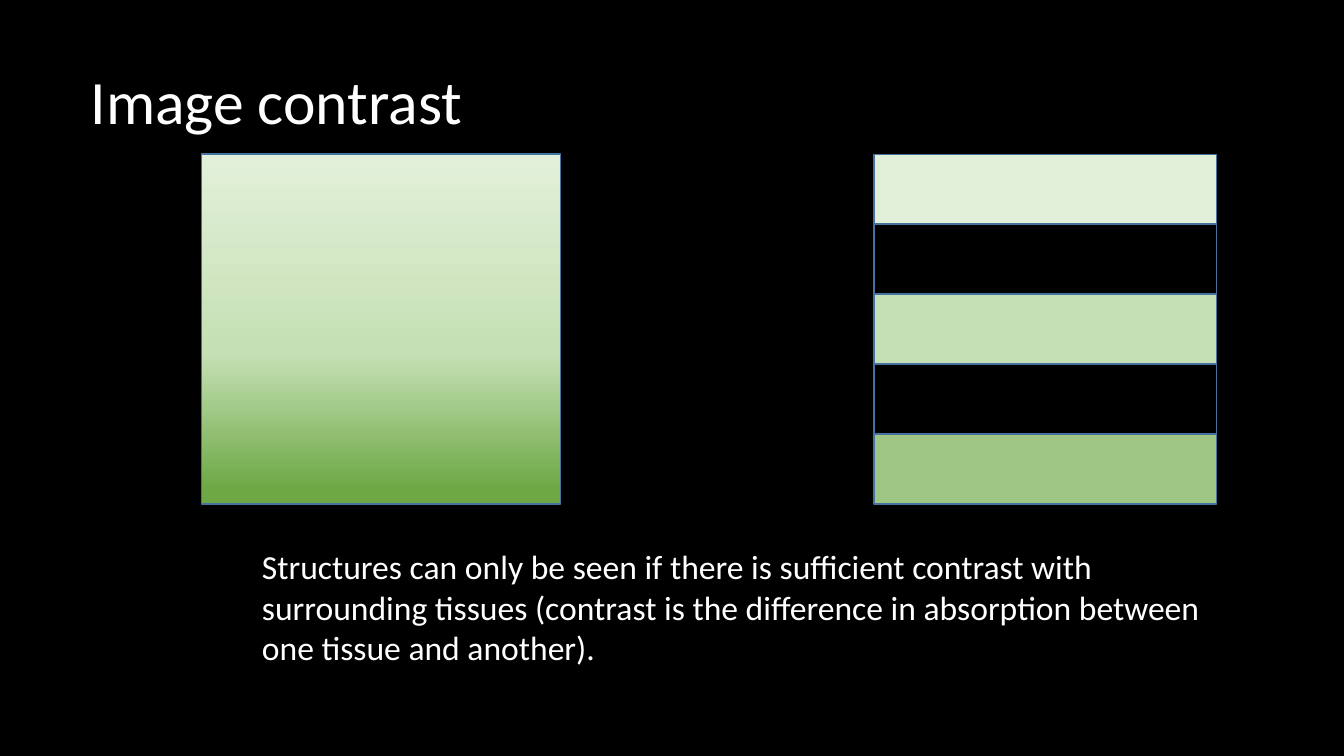
from lxml.etree import SubElement
from pptx import Presentation
from pptx.dml.color import RGBColor
from pptx.enum.shapes import MSO_SHAPE as Shape
from pptx.enum.text import MSO_ANCHOR as Anchor, MSO_AUTO_SIZE as AutoSize, PP_ALIGN as Align
from pptx.oxml.ns import qn
from pptx.util import Pt

BLACK = RGBColor(0x00, 0x00, 0x00)
WHITE = RGBColor(0xFF, 0xFF, 0xFF)
OUTLINE = RGBColor(0x43, 0x73, 0x9E)
PALE_GREEN = RGBColor(0xE2, 0xF0, 0xD9)
LIGHT_GREEN = RGBColor(0xC5, 0xE0, 0xB4)
MID_GREEN = RGBColor(0xA9, 0xD1, 0x8E)
DEEP_GREEN = RGBColor(0x6D, 0xA8, 0x45)

GRADIENT_STOPS = [(0, PALE_GREEN), (57, LIGHT_GREEN), (96, DEEP_GREEN)]
BANDS = [(4, MID_GREEN, 95), (2, LIGHT_GREEN, 100), (0, PALE_GREEN, 100),
         (3, None, 100), (1, BLACK, 100)]
BAND_COUNT = len(BANDS)

TITLE = "Image contrast"
EXPLANATION = ("Structures can only be seen if there is sufficient contrast with "
               "surrounding tissues (contrast is the difference in absorption between "
               "one tissue and another).")


def apply_format(target, values):
    for name, value in values.items():
        setattr(target, name, value)


def place(shape, box):
    left, top, width, height = map(Pt, box)
    apply_format(shape, {"left": left, "top": top, "width": width, "height": height})


def write_text(shape, text, size, frame_format, paragraph_format):
    apply_format(shape.text_frame, {"word_wrap": True, **frame_format})
    paragraph = shape.text_frame.paragraphs[0]
    apply_format(paragraph, {"alignment": Align.LEFT, **paragraph_format})
    run = paragraph.add_run()
    run.text = text
    apply_format(run.font, {"name": "Calibri", "size": Pt(size)})
    run.font.color.rgb = WHITE
    return paragraph


def add_rectangle(shapes, box):
    shape = shapes.add_shape(Shape.RECTANGLE, *map(Pt, box))
    shape.shadow.inherit = False
    shape.line.color.rgb = OUTLINE
    shape.line.width = Pt(1)
    return shape


def add_title(slide, box):
    title = slide.shapes.title
    place(title, box)
    write_text(title, TITLE, 44,
               {"vertical_anchor": Anchor.MIDDLE, "auto_size": AutoSize.NONE},
               {"line_spacing": 0.9})


def add_gradient_square(slide, box):
    square = add_rectangle(slide.shapes, box)
    square.fill.gradient()
    gradient = square.fill._xPr.find(qn("a:gradFill"))
    stop_list = gradient.find(qn("a:gsLst"))
    for stop in list(stop_list):
        stop_list.remove(stop)
    for percent, color in GRADIENT_STOPS:
        stop = SubElement(stop_list, qn("a:gs"), pos=str(percent * 1000))
        SubElement(stop, qn("a:srgbClr"), val=str(color))
    gradient.find(qn("a:lin")).set("ang", str(90 * 60000))


def add_bands(slide, box):
    left, top, width, height = box
    band_height = height / BAND_COUNT
    group = slide.shapes.add_group_shape()
    for row, color, opacity in BANDS:
        band = add_rectangle(group.shapes, (left, top + row * band_height, width, band_height))
        if color is None:
            band.fill.background()
            continue
        band.fill.solid()
        band.fill.fore_color.rgb = color
        if opacity < 100:
            color_element = band.fill._xPr.find(qn("a:solidFill"))[0]
            SubElement(color_element, qn("a:alpha"), val=str(opacity * 1000))


def add_explanation(slide, box):
    textbox = slide.shapes.add_textbox(*map(Pt, box))
    paragraph = write_text(textbox, EXPLANATION, 24,
                           {"auto_size": AutoSize.SHAPE_TO_FIT_TEXT}, {"level": 1})
    properties = paragraph._p.get_or_add_pPr()
    for name, value in {"marL": Pt(36), "indent": Pt(0)}.items():
        properties.set(name, str(value))


def build_contrast_slide(presentation):
    slide = presentation.slides.add_slide(presentation.slide_layouts[5])
    slide.background.fill.solid()
    slide.background.fill.fore_color.rgb = BLACK
    add_title(slide, (57.6, 39.6, 828, 70.56))
    add_bands(slide, (624.24, 110.16, 244.8, 249.84))
    add_gradient_square(slide, (144, 110.16, 256.32, 249.84))
    add_explanation(slide, (144, 386.64, 725.76, 94.32))


def main():
    presentation = Presentation()
    apply_format(presentation, {"slide_width": Pt(960), "slide_height": Pt(540)})
    build_contrast_slide(presentation)
    presentation.save("out.pptx")


if __name__ == "__main__":
    main()
